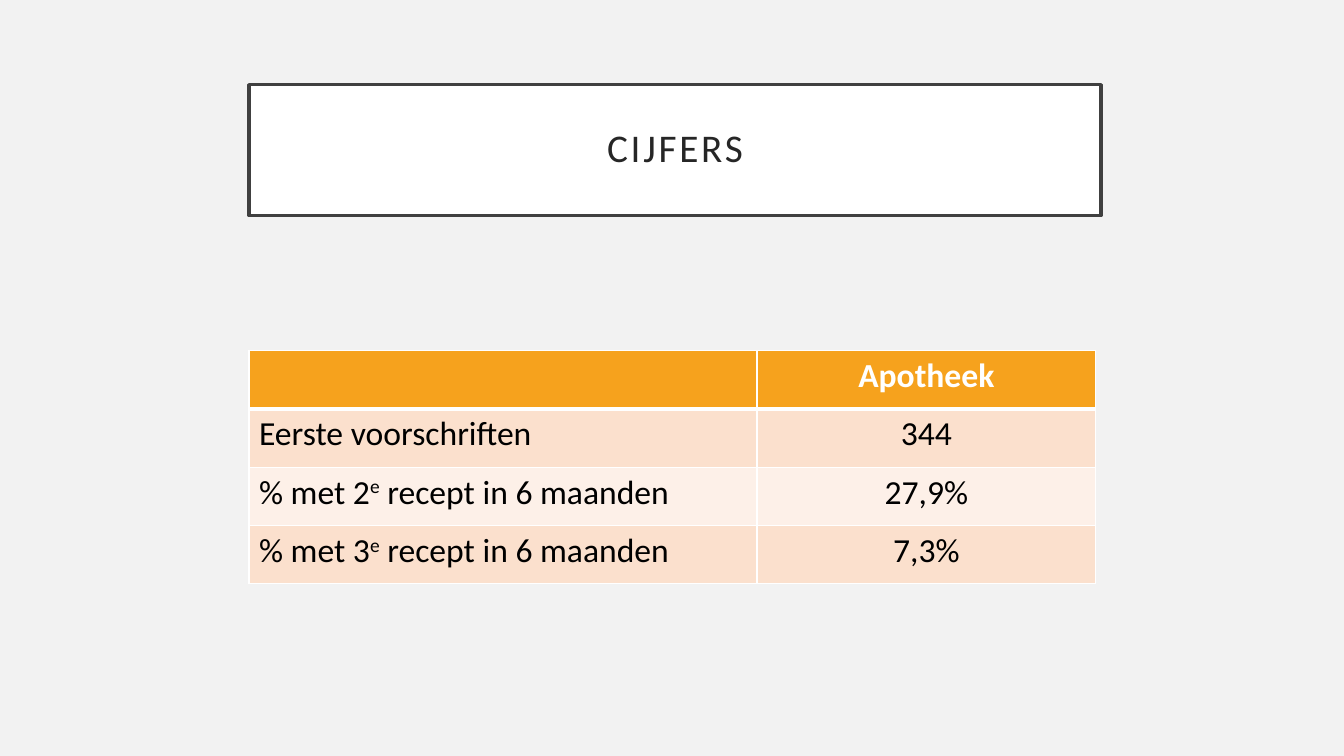
"""Build the slide with the prescription figures of the pharmacy."""
from dataclasses import dataclass

from lxml.etree import SubElement
from pptx import Presentation
from pptx.dml.color import RGBColor as Color
from pptx.enum.text import MSO_ANCHOR as Anchor, MSO_AUTO_SIZE as AutoSize, PP_ALIGN as Align
from pptx.oxml.ns import qn
from pptx.util import Emu, Inches, Pt


@dataclass(frozen=True)
class Theme:
    font: str = "Calibri"
    title_size: int = 28
    table_size: int = 24
    page: str = "F2F2F2"
    white: str = "FFFFFF"
    frame: str = "404040"
    title: str = "262626"
    ink: str = "000000"
    header: str = "F6A21D"
    bands: tuple[str, str] = ("FBE0CD", "FDF0E8")


@dataclass(frozen=True)
class Area:
    """A place on the page, in percent of its width and height."""
    left: float
    top: float
    width: float
    height: float


@dataclass(frozen=True)
class Figure:
    label: str
    value: str


THEME = Theme()
WIDTH, HEIGHT = Inches(13.33), Inches(7.5)
TITLE_AREA = Area(18.53, 11.2, 63.39, 17.33)
TABLE_AREA = Area(18.53, 46.4, 63, 30.8)
COLUMN_SHARES = (0.6, 0.4)
RAISED_MARK = "^"
FIGURES = (
    Figure("", "Apotheek"),
    Figure("Eerste voorschriften", "344"),
    Figure("% met 2^e^ recept in 6 maanden", "27,9%"),
    Figure("% met 3^e^ recept in 6 maanden", "7,3%"),
)


def place(area: Area) -> tuple[Emu, Emu, Emu, Emu]:
    """Turn an area into left, top, width and height."""
    return (Emu(round(WIDTH * area.left / 100)), Emu(round(HEIGHT * area.top / 100)),
            Emu(round(WIDTH * area.width / 100)), Emu(round(HEIGHT * area.height / 100)))


def apply(target, **values) -> None:
    """Set each named attribute on the target."""
    for name, value in values.items():
        setattr(target, name, value)


def paint(fill, color: str) -> None:
    """Give a fill one solid colour."""
    fill.solid()
    fill.fore_color.rgb = Color.from_string(color)


def write(para, text: str, size: int, color: str, bold: bool = False, spacing: int = 0) -> None:
    """Write text in a paragraph, raising the parts between marks."""
    for index, part in enumerate(text.split(RAISED_MARK)):
        span = para.add_run()
        span.text = part
        apply(span.font, name=THEME.font, size=Pt(size), bold=bold)
        span.font.color.rgb = Color.from_string(color)
        properties = span.font._element
        if spacing:
            properties.set("spc", str(spacing * 100))
        if index % 2:
            properties.set("baseline", "30000")


def border(cell, widths: dict[str, float]) -> None:
    """Draw white lines along the sides of a cell."""
    properties = cell._tc.get_or_add_tcPr()
    for side, width in widths.items():
        line = SubElement(properties, qn(f"a:ln{side}"), w=str(Pt(width)))
        SubElement(SubElement(line, qn("a:solidFill")), qn("a:srgbClr"), val=THEME.white)


def draw_title(page, text: str) -> None:
    """Draw the framed title."""
    box = page.shapes.title
    apply(box, **dict(zip(("left", "top", "width", "height"), place(TITLE_AREA))))
    paint(box.fill, THEME.white)
    paint(box.line.fill, THEME.frame)
    box.line.width = Pt(2.5)
    margins = dict.fromkeys(
        ("margin_left", "margin_top", "margin_right", "margin_bottom"), Inches(0.2))
    apply(box.text_frame, vertical_anchor=Anchor.MIDDLE, word_wrap=True,
          auto_size=AutoSize.NONE, **margins)
    para = box.text_frame.paragraphs[0]
    apply(para, alignment=Align.CENTER, line_spacing=0.9)
    write(para, text, THEME.title_size, THEME.title, spacing=2)


def draw_table(page, figures: tuple[Figure, ...]) -> None:
    """Draw the table of figures under a header row."""
    table = page.shapes.add_table(len(figures), len(COLUMN_SHARES), *place(TABLE_AREA)).table
    for column, share in zip(table.columns, COLUMN_SHARES):
        column.width = round(WIDTH * TABLE_AREA.width / 100 * share)
    for row, figure in enumerate(figures):
        header = row == 0
        for column, text in enumerate((figure.label, figure.value)):
            cell = table.cell(row, column)
            border(cell, {"L": 1, "R": 1, "T": 3 if row == 1 else 1, "B": 3 if header else 1})
            paint(cell.fill, THEME.header if header else THEME.bands[(row - 1) % 2])
            para = cell.text_frame.paragraphs[0]
            para.alignment = Align.CENTER if column else Align.LEFT
            if text:
                write(para, text, THEME.table_size,
                      THEME.white if header else THEME.ink, bold=header)


def main() -> None:
    """Build and save the deck."""
    deck = Presentation()
    apply(deck, slide_width=WIDTH, slide_height=HEIGHT)
    page = deck.slides.add_slide(deck.slide_layouts.get_by_name("Title Only"))
    paint(page.background.fill, THEME.page)
    draw_title(page, "CIJFERS")
    draw_table(page, FIGURES)
    deck.save("out.pptx")


if __name__ == "__main__":
    main()
